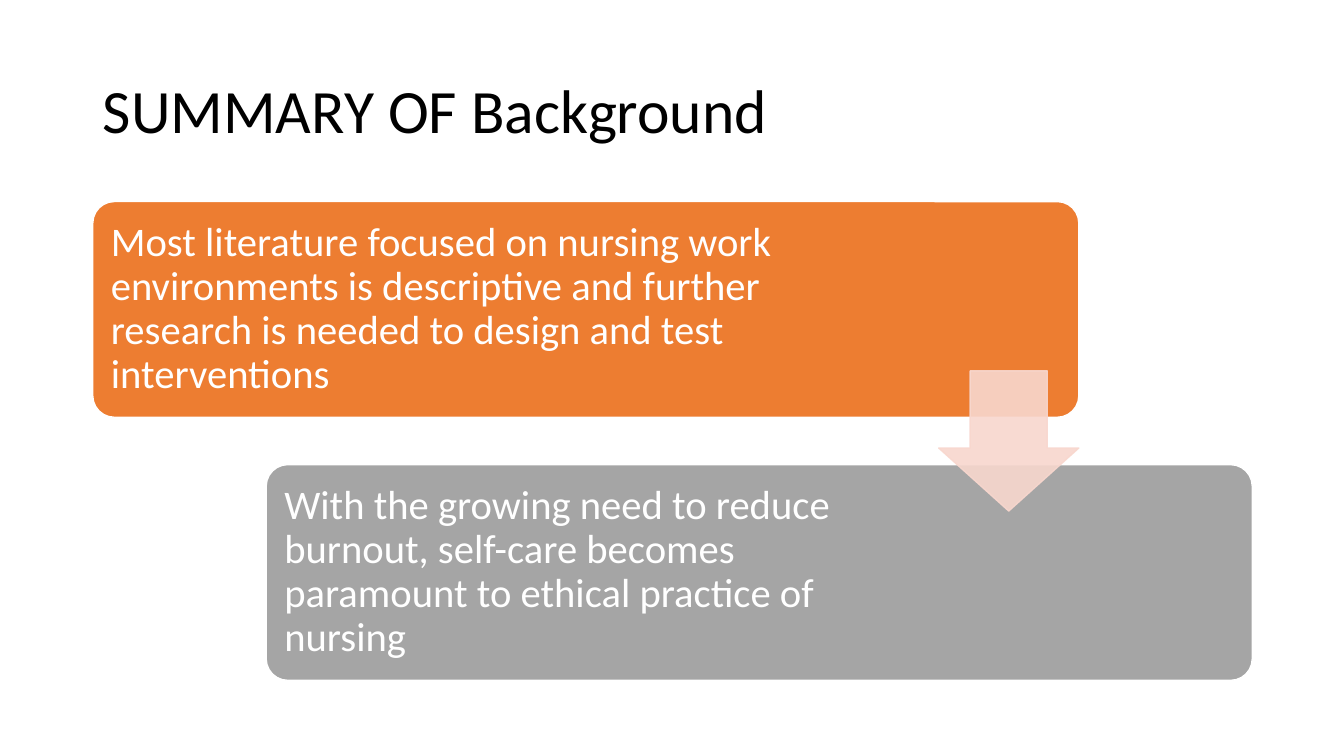
from lxml import etree
from pptx import Presentation
from pptx.dml.color import RGBColor
from pptx.enum.shapes import MSO_SHAPE as Preset
from pptx.enum.text import MSO_ANCHOR as Anchor, PP_ALIGN as Align
from pptx.oxml.ns import qn
from pptx.util import Inches, Pt

BLACK = RGBColor(0x00, 0x00, 0x00)
WHITE = RGBColor(0xFF, 0xFF, 0xFF)
ORANGE = RGBColor(0xED, 0x7D, 0x31)
GRAY = RGBColor(0xA5, 0xA5, 0xA5)
PINK = RGBColor(0xF8, 0xD7, 0xCE)

MARGIN = 0.92
CARD_WIDTH, CARD_HEIGHT = 9.78, 2.14
STEP_X, STEP_Y = 1.72, 2.61
FIRST_TOP = 2
TEXT_OFFSET = 0.06
ARROW_SIZE = 1.39


def write_text(shape, text, size, color):
    frame = shape.text_frame
    frame.text = text
    frame.word_wrap = True
    frame.vertical_anchor = Anchor.MIDDLE
    paragraph = frame.paragraphs[0]
    paragraph.alignment = Align.LEFT
    paragraph.line_spacing = 0.9
    font = paragraph.runs[0].font
    for name, value in {"name": "Calibri", "size": Pt(size)}.items():
        setattr(font, name, value)
    font.color.rgb = color
    return frame


def add_block(preset, box, color, adjustments):
    """Add a flat filled shape; box is left, top, width, height in inches."""
    shape = slide.shapes.add_shape(preset, *map(Inches, box))
    shape.shadow.inherit = False
    shape.fill.solid()
    shape.fill.fore_color.rgb = color
    shape.line.color.rgb = WHITE
    shape.line.width = Pt(1)
    for index, value in enumerate(adjustments):
        shape.adjustments[index] = value
    return shape


presentation = Presentation()
presentation.slide_width = Inches(13.33)
presentation.slide_height = Inches(7.5)
slide = presentation.slides.add_slide(presentation.slide_layouts[5])

title = slide.shapes.title
title_box = {"left": MARGIN, "top": 0.4, "width": 11.5, "height": 1.45}
for name, value in title_box.items():
    setattr(title, name, Inches(value))
write_text(title, "SUMMARY OF Background", 44, BLACK)

# Each card steps right and down; its text keeps clear of the arrow
cards = [
    (ORANGE, 7.56, "Most literature focused on nursing work environments is descriptive "
                   "and further research is needed to design and test interventions"),
    (GRAY, 6.53, "With the growing need to reduce burnout, self-care becomes "
                 "paramount to ethical practice of nursing"),
]
for row, (color, text_width, text) in enumerate(cards):
    left, top = MARGIN + row * STEP_X, FIRST_TOP + row * STEP_Y
    add_block(Preset.ROUNDED_RECTANGLE, (left, top, CARD_WIDTH, CARD_HEIGHT), color, [0.1])
    text_box = slide.shapes.add_textbox(
        Inches(left + TEXT_OFFSET), Inches(top + TEXT_OFFSET),
        Inches(text_width), Inches(CARD_HEIGHT - 2 * TEXT_OFFSET))
    frame = write_text(text_box, text, 29, WHITE)
    for side in ("left", "top", "right", "bottom"):
        setattr(frame, f"margin_{side}", Inches(0.12))

# The arrow ends at the first card's right edge, centred on the gap between cards
gap_middle = FIRST_TOP + (CARD_HEIGHT + STEP_Y) / 2
arrow_box = (MARGIN + CARD_WIDTH - ARROW_SIZE, gap_middle - ARROW_SIZE / 2,
             ARROW_SIZE, ARROW_SIZE)
arrow = add_block(Preset.DOWN_ARROW, arrow_box, PINK, [0.55, 0.45])
arrow.line.color.rgb = PINK
for color_element in arrow.element.spPr.iter(qn("a:srgbClr")):
    etree.SubElement(color_element, qn("a:alpha"), val="90000")

presentation.save("out.pptx")
